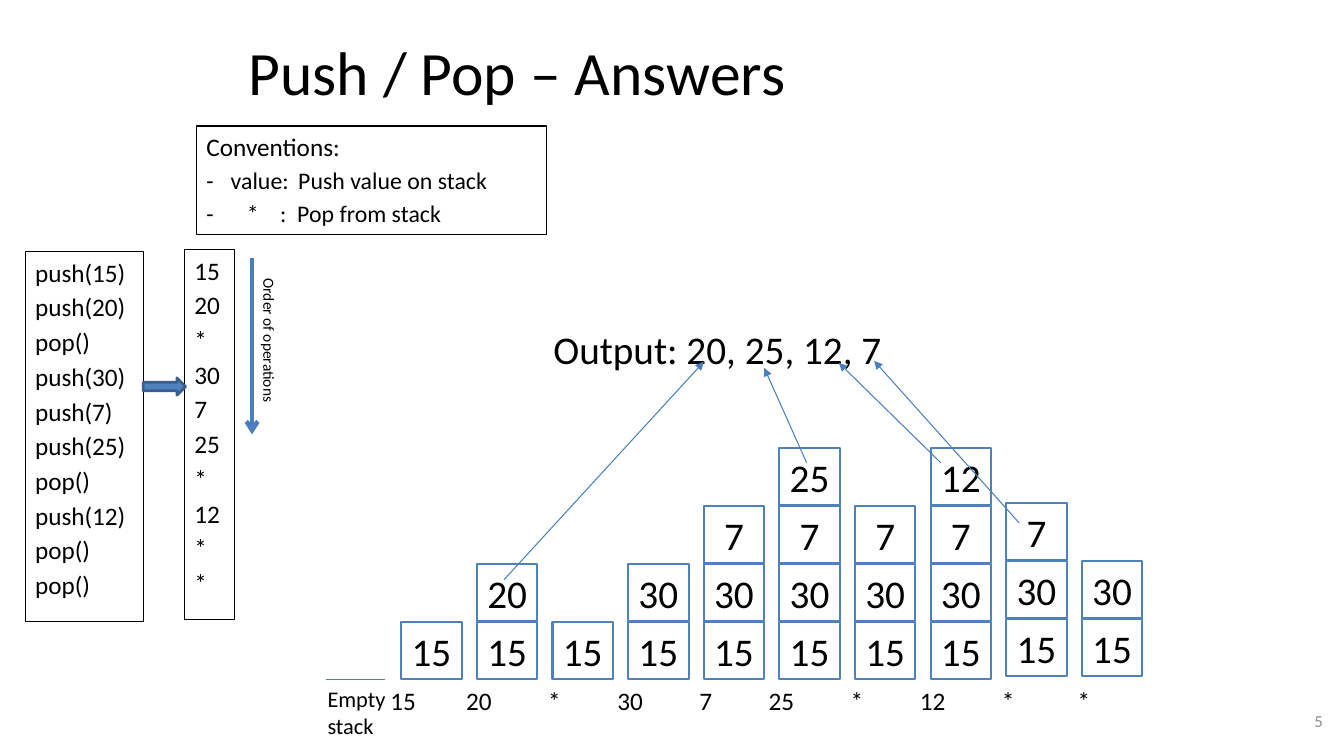
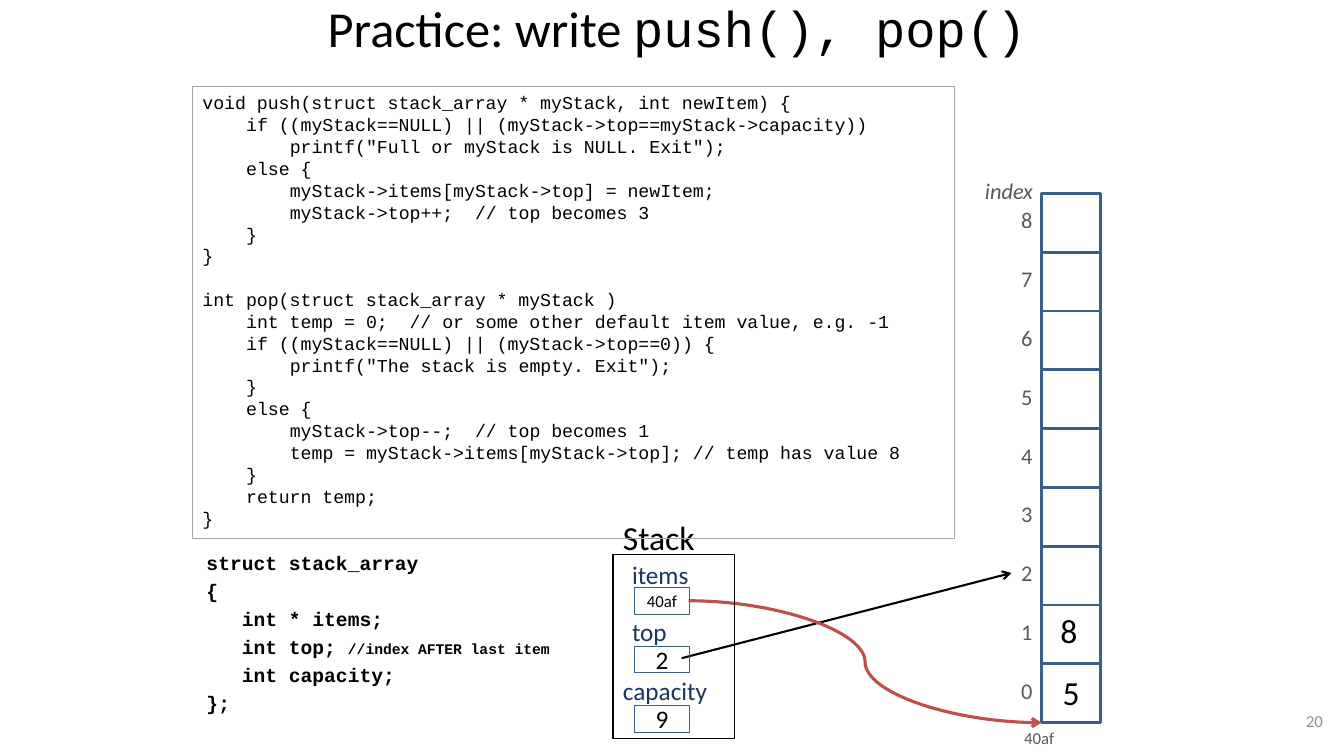
"""Build two slides about the push and pop operations of a stack."""
from dataclasses import dataclass

from lxml import etree
from pptx import Presentation
from pptx import util as u
from pptx.dml.color import RGBColor
from pptx.enum import shapes, text
from pptx.oxml import ns


@dataclass(frozen=True)
class Theme:
    sans: str = "Calibri"
    mono: str = "Courier New"
    black: str = "000000"
    white: str = "FFFFFF"
    blue: str = "4F81BD"
    line_blue: str = "4B7EBC"
    dark_blue: str = "3A5F8C"
    navy: str = "17375E"
    red: str = "C0504D"
    gray: str = "595959"
    light_gray: str = "A6A6A6"
    number_gray: str = "8C8C8C"
    title: float = 44
    long_title: float = 36
    large: float = 28
    medium: float = 24
    body: float = 18
    detail: float = 17
    label: float = 16
    struct: float = 14
    code: float = 13
    small: float = 12
    caption: float = 11
    comment: float = 10.5
    list_gap: float = 3.2
    blank_line: float = 15.5


theme = Theme()
LEFT, CENTER, RIGHT = text.PP_ALIGN.LEFT, text.PP_ALIGN.CENTER, text.PP_ALIGN.RIGHT
TOP, MIDDLE = text.MSO_ANCHOR.TOP, text.MSO_ANCHOR.MIDDLE
RECTANGLE = shapes.MSO_SHAPE.RECTANGLE
title_style = dict(size=theme.title, align=CENTER, anchor=MIDDLE)
number_box = (10.11, 6.95, 3.11, 0.4)
number_style = dict(size=theme.small, color=theme.number_gray, align=RIGHT, anchor=MIDDLE)


def add_text(slide, content, box, size=theme.body, font=theme.sans, color=theme.black,
             bold=False, italic=False, align=LEFT, anchor=TOP, wrap=True, gap=0, tabs=(),
             line=None, line_width=0.75, fill=None, geometry=RECTANGLE, rotation=0):
    """Add a text box, or a shape if it has a line; leading spaces become indents."""
    place = [u.Inches(length) for length in box]
    if line:
        shape = slide.shapes.add_shape(geometry, *place)
        shape.shadow.inherit = False
        shape.line.color.rgb = RGBColor.from_string(line)
        shape.line.width = u.Pt(line_width)
        if fill:
            shape.fill.solid()
            shape.fill.fore_color.rgb = RGBColor.from_string(fill)
        else:
            shape.fill.background()
    else:
        shape = slide.shapes.add_textbox(*place)
    shape.rotation = rotation
    frame = shape.text_frame
    frame.word_wrap = wrap
    frame.vertical_anchor = anchor
    paragraph, before = None, gap
    for entry in content.split("\n") if isinstance(content, str) else content:
        if not entry:
            before = theme.blank_line
            continue
        runs = [(entry, {})] if isinstance(entry, str) else entry
        paragraph = frame.add_paragraph() if paragraph is not None else frame.paragraphs[0]
        paragraph.alignment = align
        paragraph.space_before, before = u.Pt(before), gap
        properties = paragraph._p.get_or_add_pPr()
        indent = len(runs[0][0]) - len(runs[0][0].lstrip(" "))
        if indent:
            properties.set("marL", str(u.Pt(indent * size * 0.6)))
            properties.set("indent", "0")
        stops = tabs[len(frame.paragraphs) - 1] if tabs else ()
        if stops:
            tab_list = etree.SubElement(properties, ns.qn("a:tabLst"))
            for stop in stops:
                etree.SubElement(tab_list, ns.qn("a:tab"), pos=str(u.Inches(stop)), algn="l")
        for index, (words, changes) in enumerate(runs):
            run = paragraph.add_run()
            run.text = words if index else words.lstrip(" ")
            run.font.name = changes.get("font", font)
            run.font.size = u.Pt(changes.get("size", size))
            run.font.bold, run.font.italic = bold, italic
            run.font.color.rgb = RGBColor.from_string(color)
    return shape


def add_line(slide, start, end, color=theme.line_blue, width=0.75, head=None,
             kind=shapes.MSO_CONNECTOR.STRAIGHT):
    """Add a connector with an optional arrowhead at its end."""
    connector = slide.shapes.add_connector(kind, *[u.Inches(value) for value in start + end])
    connector.line.color.rgb = RGBColor.from_string(color)
    connector.line.width = u.Pt(width)
    if head:
        etree.SubElement(connector.line._get_or_add_ln(), ns.qn("a:tailEnd"), type=head)
    etree.SubElement(connector._element.spPr, ns.qn("a:effectLst"))
    return connector


presentation = Presentation()
presentation.slide_width = u.Inches(13.33)
presentation.slide_height = u.Inches(7.5)
blank = presentation.slide_layouts[6]

slide = presentation.slides.add_slide(blank)
add_text(slide, "Push / Pop – Answers", (0.67, 0.08, 8.92, 1.25), **title_style)
add_text(slide, "5", number_box, **number_style)

operations = ["15", "20", "*", "30", "7", "25", "*", "12", "*", "*"]
calls = ["pop()" if operation == "*" else f"push({operation})" for operation in operations]
add_text(slide, calls, (0.25, 2.5, 1.17, 3.67), gap=theme.list_gap, line=theme.black)

stack = []
for step, operation in enumerate(operations):
    if operation == "*":
        stack.pop()
    else:
        stack.append(operation)
    base = 6.17 if step < 8 else 6.14
    for level, value in enumerate(stack):
        add_text(slide, value, (3.98 + 0.75 * step, base - 0.575 * level, 0.6, 0.57),
                 size=theme.large, align=CENTER, wrap=False, line=theme.blue, line_width=1.5)
    add_text(slide, operation, (3.75 + 0.75 * step, 6.75, 0.5, 0.4), align=CENTER)

add_line(slide, (3.23, 6.74), (3.82, 6.74))
add_text(slide, "Empty stack", (3.15, 6.75, 0.92, 0.64), size=theme.label)
detail = dict(size=theme.detail)
conventions = [
    "Conventions:",
    [("-\tvalue:\tPush value on stack", detail)],
    [("-\t*\t:\tPop from stack", detail)],
]
add_text(slide, conventions, (1.95, 1.25, 3.47, 1.08), gap=theme.list_gap, line=theme.black,
         tabs=[(), (0.24, 0.91), (0.4, 0.73, 0.9)])
add_text(slide, operations, (1.83, 2.48, 0.5, 3.67), gap=theme.list_gap, line=theme.black)
add_text(slide, "", (1.42, 3.75, 0.42, 0.17), geometry=shapes.MSO_SHAPE.RIGHT_ARROW,
         fill=theme.blue, line=theme.dark_blue, line_width=2)
add_line(slide, (2.5, 2.56), (2.5, 4.31), width=3, head="arrow")
add_text(slide, "Order of operations", (1.95, 3.24, 1.44, 0.29), size=theme.caption,
         wrap=False, rotation=90)
add_text(slide, "Output: 20, 25, 12, 7", (5.39, 3.18, 3.5, 0.57), size=theme.large, wrap=False)
for popped, printed in [((5, 5.75), (6.98, 3.59)), ((8, 4.59), (7.58, 3.65)),
                        ((9.33, 4.59), (8.32, 3.6)), ((10.11, 5.19), (8.67, 3.58))]:
    add_line(slide, popped, printed, head="triangle")

slide = presentation.slides.add_slide(blank)
title = [[("Practice: write ", {}), ("push(), pop()", dict(font=theme.mono))]]
add_text(slide, title, (2.92, -0.06, 7.59, 0.66), **{**title_style, "size": theme.long_title})
struct = [
    "struct stack_array",
    "{",
    "   int * items;",
    [("   int top; ", {}), ("//index AFTER last item", dict(size=theme.comment))],
    "   int capacity;",
    "};",
]
add_text(slide, struct, (1.95, 5.42, 3.83, 2.11), size=theme.struct, font=theme.mono,
         bold=True, gap=theme.list_gap)
add_text(slide, "20", number_box, **number_style)

cell_count, array_left, array_top = 9, 10.33, 1.92
cell = 5.25 / cell_count
index_labels = {}
for row in range(cell_count):
    add_text(slide, "", (array_left, array_top + row * cell, cell, cell),
             fill=theme.white, line=theme.dark_blue, line_width=2)
    index = cell_count - 1 - row
    index_labels[index] = add_text(slide, str(index), (10.03, 2 + row * cell, 0.32, 0.37),
                                   size=theme.label, color=theme.gray, wrap=False)
add_text(slide, "index", (9.67, 1.71, 0.68, 0.37), size=theme.label, color=theme.gray,
         italic=True, wrap=False)
add_text(slide, "40af", (10.06, 7.17, 0.5, 0.3), size=theme.small, color=theme.gray, wrap=False)
for item, left, top in [("5", 10.44, 6.62), ("8", 10.42, 6)]:
    add_text(slide, item, (left, top, 0.37, 0.5), size=theme.medium, wrap=False)

top_pointer = add_line(slide, (6.76, 6.53), (10.03, 5.69), color=theme.black, width=1.5,
                       head="arrow")
top_pointer.end_connect(index_labels[2], 1)
add_line(slide, (6.83, 5.96), (10.33, 7.17), color=theme.red, width=2.25, head="arrow",
         kind=shapes.MSO_CONNECTOR.CURVE)

add_text(slide, "Stack", (6.08, 5.08, 1, 0.5), size=theme.medium, wrap=False)
add_text(slide, "", (6.08, 5.5, 1.21, 1.83), line=theme.black)
fields = [("items", "40af", 6.17, 5.5, 5.83, theme.small),
          ("top", "2", 6.17, 6.07, 6.41, theme.body),
          ("capacity", "9", 6.08, 6.65, 7, theme.body)]
for name, value, left, name_top, value_top, value_size in fields:
    add_text(slide, name, (left, name_top, 1.21, 0.4), color=theme.navy)
    add_text(slide, value, (6.29, value_top, 0.55, 0.26), size=value_size, align=CENTER,
             anchor=MIDDLE, line=theme.dark_blue, line_width=0.25)

code = """void push(struct stack_array * myStack, int newItem) {
    if ((myStack==NULL) || (myStack->top==myStack->capacity))
        printf("Full or myStack is NULL. Exit");
    else {
        myStack->items[myStack->top] = newItem;
        myStack->top++;  // top becomes 3
    }
}

int pop(struct stack_array * myStack )
    int temp = 0;  // or some other default item value, e.g. -1
    if ((myStack==NULL) || (myStack->top==0)) {
        printf("The stack is empty. Exit");
    }
    else {
        myStack->top--;  // top becomes 1
        temp = myStack->items[myStack->top]; // temp has value 8
    }
    return temp;
}"""
add_text(slide, code, (1.91, 0.86, 7.56, 4.48), size=theme.code, font=theme.mono,
         line=theme.light_gray)

presentation.save("out.pptx")
